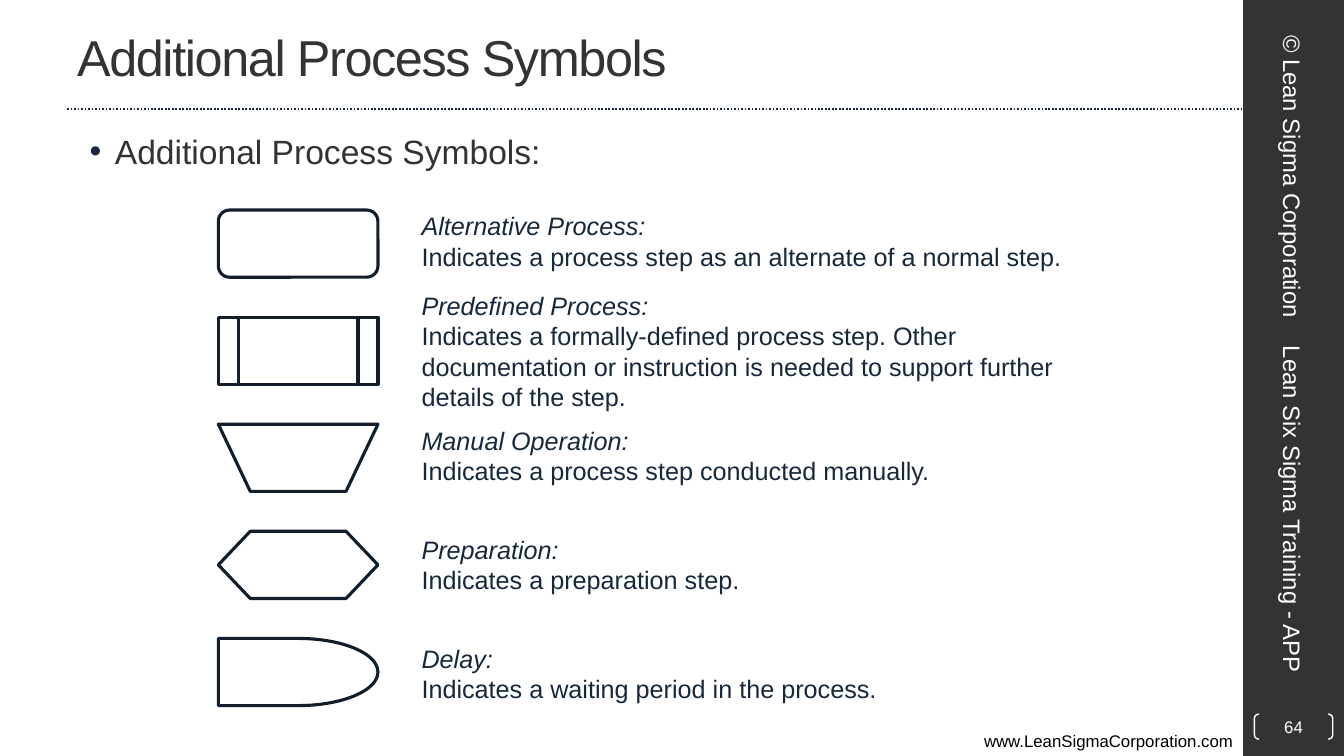
from lxml.etree import SubElement
from pptx import Presentation
from pptx.dml.color import RGBColor
from pptx.enum.dml import MSO_LINE
from pptx.enum.shapes import MSO_CONNECTOR, MSO_SHAPE as SHAPE
from pptx.enum.text import MSO_ANCHOR as ANCHOR, PP_ALIGN as ALIGN
from pptx.oxml.ns import qn
from pptx.util import Pt

CHARCOAL, NAVY, DARK_NAVY = "333333", "18283B", "121E2C"
WHITE, BLACK = "FFFFFF", "000000"

SYMBOL_TOP, SYMBOL_PITCH = 150, 76.5
# symbol, label top, label height, name, meaning
SYMBOLS = [
    (SHAPE.FLOWCHART_ALTERNATE_PROCESS, 147, 51, "Alternative Process:",
     "Indicates a process step as an alternate of a normal step."),
    (SHAPE.FLOWCHART_PREDEFINED_PROCESS, 204, 94, "Predefined Process:",
     "Indicates a formally-defined process step. Other documentation or "
     "instruction is needed to support further details of the step."),
    (SHAPE.FLOWCHART_MANUAL_OPERATION, 300, 51, "Manual Operation:",
     "Indicates a process step conducted manually."),
    (SHAPE.FLOWCHART_PREPARATION, 378, 51, "Preparation:",
     "Indicates a preparation step."),
    (SHAPE.FLOWCHART_DELAY, 456, 51, "Delay:",
     "Indicates a waiting period in the process."),
]


def color(hex_string):
    return RGBColor.from_string(hex_string)


def write(paragraph, text, size=18, fill=NAVY, italic=False, align=ALIGN.LEFT, spacing=None):
    """Add one formatted run; spacing is in hundredths of a point."""
    paragraph.alignment = align
    run = paragraph.add_run()
    run.text = text
    font = run.font
    font.name, font.size, font.italic = "Arial", Pt(size), italic
    font.color.rgb = color(fill)
    if spacing is not None:
        font._element.set("spc", str(spacing))


def add_text_box(slide, left, top, width, height, anchor=ANCHOR.TOP):
    box = slide.shapes.add_textbox(Pt(left), Pt(top), Pt(width), Pt(height))
    box.text_frame.word_wrap = True
    box.text_frame.vertical_anchor = anchor
    return box


def add_text(slide, left, top, width, height, text, anchor=ANCHOR.TOP, **text_format):
    box = add_text_box(slide, left, top, width, height, anchor)
    write(box.text_frame.paragraphs[0], text, **text_format)
    return box


def add_shape(slide, kind, left, top, width, height, fill=None, line=None, line_width=1):
    shape = slide.shapes.add_shape(kind, Pt(left), Pt(top), Pt(width), Pt(height))
    shape.shadow.inherit = False
    if fill:
        shape.fill.solid()
        shape.fill.fore_color.rgb = color(fill)
    else:
        shape.fill.background()
    if line:
        shape.line.color.rgb = color(line)
        shape.line.width = Pt(line_width)
    else:
        shape.line.fill.background()
    return shape


def add_dotted_rule(slide, left, right, top):
    rule = slide.shapes.add_connector(
        MSO_CONNECTOR.STRAIGHT, Pt(left), Pt(top), Pt(right), Pt(top))
    rule.line.color.rgb = color("17273B")
    rule.line.width = Pt(1.25)
    rule.line.dash_style = MSO_LINE.ROUND_DOT
    SubElement(rule._element.spPr, qn("a:effectLst"))


def add_bullet(slide, left, top, width, height, text):
    box = add_text_box(slide, left, top, width, height)
    paragraph = box.text_frame.paragraphs[0]
    properties = paragraph._p.get_or_add_pPr()
    properties.set("marL", str(Pt(27)))
    properties.set("indent", str(Pt(-18)))
    bullet_color = SubElement(properties, qn("a:buClr"))
    SubElement(bullet_color, qn("a:srgbClr"), val=NAVY)
    SubElement(properties, qn("a:buFont"), typeface="Arial")
    SubElement(properties, qn("a:buChar"), char="•")
    write(paragraph, text, size=24, fill=CHARCOAL)


def add_sidebar_text(slide, center_y, length, text, align):
    center_x, thickness = 923.4, 38
    box = add_text(slide, center_x - length / 2, center_y - thickness / 2, length, thickness,
                   text, anchor=ANCHOR.MIDDLE, size=17, fill=WHITE, align=align)
    box.rotation = 90


def add_page_number(slide, number):
    bracket = add_shape(slide, SHAPE.DOUBLE_BRACKET, 896, 510, 56, 18, line=WHITE)
    bracket.adjustments[0] = 0.18
    frame = bracket.text_frame
    frame.margin_left = frame.margin_right = frame.margin_top = frame.margin_bottom = 0
    frame.vertical_anchor = ANCHOR.MIDDLE
    write(frame.paragraphs[0], number, size=12, fill=WHITE, align=ALIGN.CENTER)


def add_symbol_label(slide, top, height, name, meaning):
    frame = add_text_box(slide, 294, top, 480, height).text_frame
    write(frame.paragraphs[0], name, italic=True)
    write(frame.add_paragraph(), meaning)


def main():
    presentation = Presentation()
    presentation.slide_width, presentation.slide_height = Pt(960), Pt(540)
    slide = presentation.slides.add_slide(presentation.slide_layouts[6])

    add_shape(slide, SHAPE.RECTANGLE, 888, 0, 72, 540, fill=CHARCOAL)
    add_dotted_rule(slide, 48, 888, 78)
    add_text(slide, 0, 518.4, 888, 21.6, "www.LeanSigmaCorporation.com",
             size=12, fill=BLACK, align=ALIGN.RIGHT)
    add_text(slide, 48, 2, 800, 76, "Additional Process Symbols",
             anchor=ANCHOR.MIDDLE, size=36, fill=CHARCOAL, spacing=-100)
    add_bullet(slide, 48, 90, 800, 432, "Additional Process Symbols:")
    add_page_number(slide, "64")
    add_sidebar_text(slide, 126, 228, "© Lean Sigma Corporation", ALIGN.CENTER)
    add_sidebar_text(slide, 372, 264, "Lean Six Sigma Training - APP", ALIGN.LEFT)

    for row, (kind, label_top, label_height, name, meaning) in enumerate(SYMBOLS):
        add_shape(slide, kind, 156, SYMBOL_TOP + row * SYMBOL_PITCH, 114, 48,
                  line=DARK_NAVY, line_width=2.25)
        add_symbol_label(slide, label_top, label_height, name, meaning)

    presentation.save("out.pptx")


if __name__ == "__main__":
    main()
